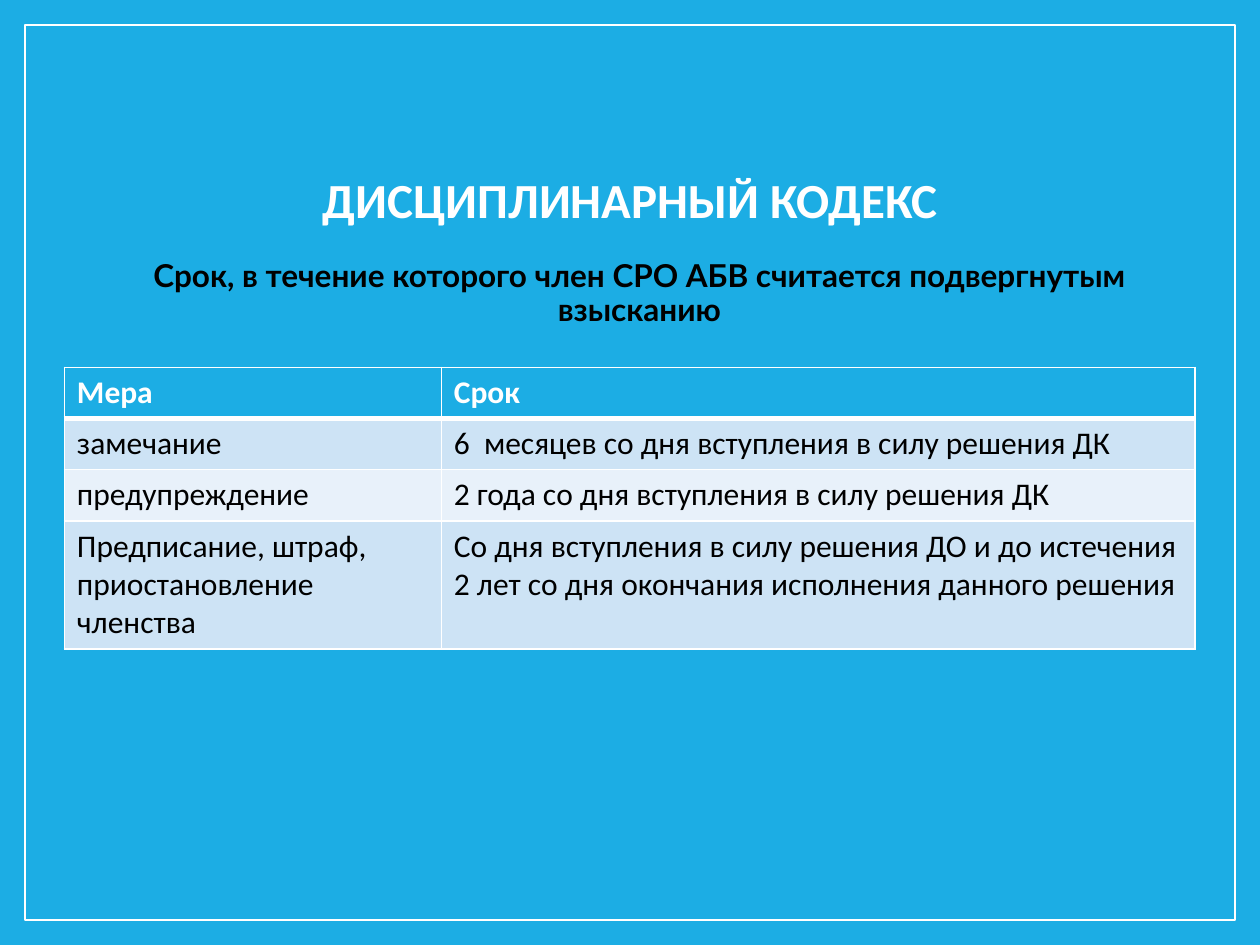
"""Builds a slide with a table of disciplinary measures and their terms."""

from dataclasses import dataclass

from lxml.etree import SubElement
from pptx import Presentation
from pptx.dml.color import RGBColor as Color
from pptx.enum.shapes import MSO_SHAPE as Shape
from pptx.enum.text import MSO_ANCHOR as Anchor, PP_ALIGN as Align
from pptx.oxml.ns import qn
from pptx.slide import Slide
from pptx.table import _Cell as Cell
from pptx.text.text import _Paragraph as Paragraph
from pptx.util import Pt


@dataclass(frozen=True)
class Theme:
    blue: str = "1CADE4"
    white: str = "FFFFFF"
    black: str = "000000"
    bands: tuple[str, str] = ("CDE3F5", "E8F1FA")
    title_size: float = 28
    body_size: float = 18
    body_font: str = "Calibri"
    subtitle_font: str = "Lato"
    thin: float = 1
    thick: float = 3


@dataclass(frozen=True)
class Box:
    left: float
    top: float
    width: float
    height: float

    def lengths(self) -> tuple[Pt, Pt, Pt, Pt]:
        return Pt(self.left), Pt(self.top), Pt(self.width), Pt(self.height)


@dataclass(frozen=True)
class TextStyle:
    font: str
    size: float
    color: str
    bold: bool = False


@dataclass(frozen=True)
class Heading:
    text: str
    box: Box
    style: TextStyle
    anchor: Anchor
    line_spacing: float
    space_before: float = 0


@dataclass(frozen=True)
class Row:
    measure: str
    term: str
    height: float = 29.2


THEME = Theme()
HEADER_STYLE = TextStyle(THEME.body_font, THEME.body_size, THEME.white, True)
BODY_STYLE = TextStyle(THEME.body_font, THEME.body_size, THEME.black)
FRAME = Box(14.4, 14.4, 691.2, 511.2)
HEADINGS = (
    Heading("ДИСЦИПЛИНАРНЫЙ КОДЕКС", Box(54, 43.2, 612, 90.7),
            TextStyle(THEME.body_font, THEME.title_size, THEME.white, True),
            Anchor.BOTTOM, 0.85),
    Heading("Срок, в течение которого член СРО АБВ считается подвергнутым взысканию",
            Box(36.7, 145.4, 657.4, 368.6),
            TextStyle(THEME.subtitle_font, THEME.body_size, THEME.black, True),
            Anchor.TOP, 0.9, 10),
)
TABLE_LEFT, TABLE_TOP = 36.8, 210
COLUMN_WIDTHS = (215.4, 430.8)
ROWS = (
    Row("Мера", "Срок"),
    Row("замечание", "6  месяцев со дня вступления в силу решения ДК"),
    Row("предупреждение", "2 года со дня вступления в силу решения ДК"),
    Row("Предписание, штраф, приостановление членства",
        "Со дня вступления в силу решения ДО и до истечения "
        "2 лет со дня окончания исполнения данного решения", 73.2),
)


def add_run(paragraph: Paragraph, text: str, style: TextStyle) -> None:
    """Append one styled run."""
    run = paragraph.add_run()
    run.text = text
    run.font.name = style.font
    run.font.size = Pt(style.size)
    run.font.bold = style.bold
    run.font.color.rgb = Color.from_string(style.color)


def add_frame(slide: Slide) -> None:
    """Draw the thin frame around the slide."""
    shape = slide.shapes.add_shape(Shape.RECTANGLE, *FRAME.lengths())
    shape.shadow.inherit = False
    shape.fill.solid()
    shape.fill.fore_color.rgb = Color.from_string(THEME.blue)
    shape.line.color.rgb = Color.from_string(THEME.white)
    shape.line.width = Pt(THEME.thin)


def add_heading(slide: Slide, heading: Heading) -> None:
    """Add a centred heading."""
    frame = slide.shapes.add_textbox(*heading.box.lengths()).text_frame
    frame.word_wrap = True
    frame.vertical_anchor = heading.anchor
    paragraph = frame.paragraphs[0]
    paragraph.alignment = Align.CENTER
    paragraph.line_spacing = heading.line_spacing
    paragraph.space_before = Pt(heading.space_before)
    add_run(paragraph, heading.text, heading.style)


def set_border(cell: Cell, side: str, width: float) -> None:
    """Draw one white border of a cell."""
    properties = cell._tc.get_or_add_tcPr()
    line = SubElement(properties, qn(f"a:ln{side}"), w=str(Pt(width)))
    fill = SubElement(line, qn("a:solidFill"))
    SubElement(fill, qn("a:srgbClr"), val=THEME.white)


def fill_cell(cell: Cell, text: str, row_index: int) -> None:
    """Set the borders, fill and text of a cell by its row."""
    is_header = row_index == 0
    widths = {"L": THEME.thin, "R": THEME.thin,
              "T": THEME.thick if row_index == 1 else THEME.thin,
              "B": THEME.thick if is_header else THEME.thin}
    for side, width in widths.items():
        set_border(cell, side, width)
    color = THEME.blue if is_header else THEME.bands[(row_index - 1) % 2]
    cell.fill.solid()
    cell.fill.fore_color.rgb = Color.from_string(color)
    style = HEADER_STYLE if is_header else BODY_STYLE
    add_run(cell.text_frame.paragraphs[0], text, style)


def add_terms_table(slide: Slide) -> None:
    """Add the table of measures and terms."""
    box = Box(TABLE_LEFT, TABLE_TOP, sum(COLUMN_WIDTHS), sum(row.height for row in ROWS))
    table = slide.shapes.add_table(len(ROWS), len(COLUMN_WIDTHS), *box.lengths()).table
    for column, width in zip(table.columns, COLUMN_WIDTHS):
        column.width = Pt(width)
    for row_index, row in enumerate(ROWS):
        table.rows[row_index].height = Pt(row.height)
        for column_index, text in enumerate((row.measure, row.term)):
            fill_cell(table.cell(row_index, column_index), text, row_index)


def main() -> None:
    """Build and save the presentation."""
    presentation = Presentation()
    presentation.slide_width, presentation.slide_height = Pt(720), Pt(540)
    slide = presentation.slides.add_slide(presentation.slide_layouts[6])
    slide.background.fill.solid()
    slide.background.fill.fore_color.rgb = Color.from_string(THEME.blue)
    add_frame(slide)
    for heading in HEADINGS:
        add_heading(slide, heading)
    add_terms_table(slide)
    presentation.save("out.pptx")


if __name__ == "__main__":
    main()
